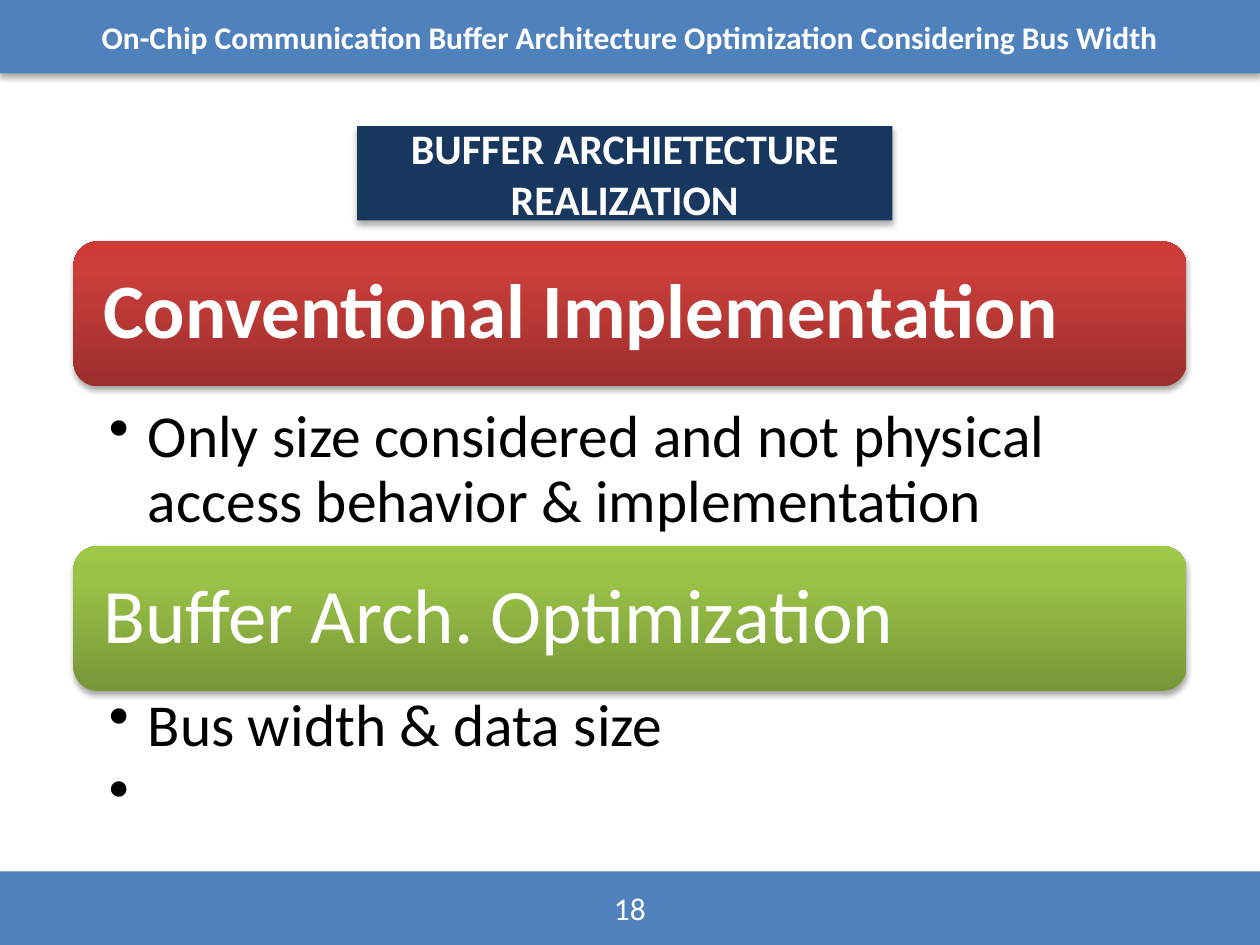
from copy import deepcopy

from lxml import etree
from pptx import Presentation
from pptx.dml.color import RGBColor
from pptx.enum.shapes import MSO_SHAPE
from pptx.enum.text import MSO_ANCHOR, PP_ALIGN
from pptx.oxml.ns import qn
from pptx.util import Inches, Pt

RECT, ROUNDED = MSO_SHAPE.RECTANGLE, MSO_SHAPE.ROUNDED_RECTANGLE
MIDDLE, TOP = MSO_ANCHOR.MIDDLE, MSO_ANCHOR.TOP
CENTER, LEFT = PP_ALIGN.CENTER, PP_ALIGN.LEFT
COLUMNS, ROWS = 120, 90
BLUE, NAVY, WHITE, BLACK = "4F81BD", "17375E", "FFFFFF", "000000"
RED_STOPS = ((0, "9C2F2D"), (0.8, "CB3E3A"), (1, "CE3B37"))
GREEN_STOPS = ((0, "779737"), (0.8, "9BC348"), (1, "9DC746"))


def color(hex_value):
    return RGBColor.from_string(hex_value)


def set_all(target, values):
    for name, value in values.items():
        setattr(target, name, value)


class Deck:
    """Holds the style and the current slide."""

    font = "Calibri"
    heading_insets = dict.fromkeys(
        ("margin_left", "margin_top", "margin_right", "margin_bottom"), Inches(0.18))
    bullet_insets = {"margin_left": Inches(0.28), "margin_top": Inches(0.06),
                     "margin_right": Inches(0.34), "margin_bottom": Inches(0.06)}

    def __init__(self):
        self.presentation = Presentation()
        set_all(self.presentation, {"slide_width": Inches(10), "slide_height": Inches(7.5)})
        self.slide = self.presentation.slides.add_slide(self.presentation.slide_layouts[6])

    def place(self, column, row, columns, rows):
        """Turn grid cells into slide lengths."""
        cell_width = self.presentation.slide_width / COLUMNS
        cell_height = self.presentation.slide_height / ROWS
        return [round(length) for length in (column * cell_width, row * cell_height,
                                             columns * cell_width, rows * cell_height)]

    def shadow(self, shape, blur, distance, opacity):
        shape.shadow.inherit = False
        effects = shape._element.spPr.find(qn("a:effectLst"))
        outer = etree.SubElement(effects, qn("a:outerShdw"), blurRad=str(Pt(blur)),
                                 dist=str(Pt(distance)), dir="5400000", rotWithShape="0")
        black = etree.SubElement(outer, qn("a:srgbClr"), val=BLACK)
        etree.SubElement(black, qn("a:alpha"), val=str(opacity * 1000))

    def fill_text(self, frame, lines, size, ink, bold=False, align=LEFT, anchor=MIDDLE,
                  insets=None, spacing=None):
        set_all(frame, {"word_wrap": True, "vertical_anchor": anchor, **(insets or {})})
        for index, line in enumerate(lines):
            paragraph = frame.add_paragraph() if index else frame.paragraphs[0]
            set_all(paragraph, {"alignment": align, **(spacing or {})})
            run = paragraph.add_run()
            run.text = line
            set_all(run.font, {"name": self.font, "size": Pt(size), "bold": bold})
            run.font.color.rgb = color(ink)

    def band(self, cells, text, size, fill, bold=True):
        """Flat rectangle with centred text."""
        shape = self.slide.shapes.add_shape(RECT, *self.place(*cells))
        shape.fill.solid()
        shape.fill.fore_color.rgb = color(fill)
        shape.line.fill.background()
        self.shadow(shape, 3.5, 2.2, 32)
        self.fill_text(shape.text_frame, [text], size, WHITE, bold, CENTER)

    def heading(self, cells, text, stops, bold):
        """Rounded bar with a gradient that runs from bottom to top."""
        shape = self.slide.shapes.add_shape(ROUNDED, *self.place(*cells))
        shape.fill.gradient()
        stop_list = shape._element.spPr.find(".//" + qn("a:gsLst"))
        stop_list.append(deepcopy(stop_list[-1]))
        for stop, (position, hex_value) in zip(shape.fill.gradient_stops, stops):
            stop.position = position
            stop.color.rgb = color(hex_value)
        shape.fill.gradient_angle = 90
        shape.line.fill.background()
        self.shadow(shape, 3.1, 1.8, 35)
        self.fill_text(shape.text_frame, [text], 44, WHITE, bold,
                       insets=self.heading_insets, spacing={"line_spacing": 0.9})

    def bullets(self, cells, lines):
        box = self.slide.shapes.add_textbox(*self.place(*cells))
        self.fill_text(box.text_frame, lines, 34, BLACK, anchor=TOP, insets=self.bullet_insets,
                       spacing={"level": 1, "line_spacing": 0.9, "space_after": Pt(5)})
        for paragraph in box.text_frame.paragraphs:
            properties = paragraph._p.get_or_add_pPr()
            properties.set("marL", str(Inches(0.31)))
            properties.set("indent", str(-Inches(0.31)))
            etree.SubElement(properties, qn("a:buChar"), char="•")


def main():
    deck = Deck()

    # Footer and header bands
    deck.band((0, 83, COLUMNS, 7), "18", 18, BLUE, bold=False)
    deck.band((0, 0, COLUMNS, 7),
              "On-Chip Communication Buffer Architecture Optimization Considering Bus Width",
              18, BLUE)

    # Two topics, each a heading with its points
    topics = (
        (23, "Conventional Implementation", RED_STOPS, True, 38, 14,
         ["Only size considered and not physical access behavior & implementation"]),
        # The second point shows a bullet only; its tab keeps the bullet drawn
        (52, "Buffer Arch. Optimization", GREEN_STOPS, False, 65.5, 15.5,
         ["Bus width & data size", "\t"]),
    )
    for row, title, stops, bold, points_row, points_rows, points in topics:
        deck.heading((7, row, 106, 13.8), title, stops, bold)
        deck.bullets((7, points_row, 106, points_rows), points)

    # Slide title
    deck.band((34, 12, 51, 9), "BUFFER ARCHIETECTURE REALIZATION", 24, NAVY)

    deck.presentation.save("out.pptx")


if __name__ == "__main__":
    main()
